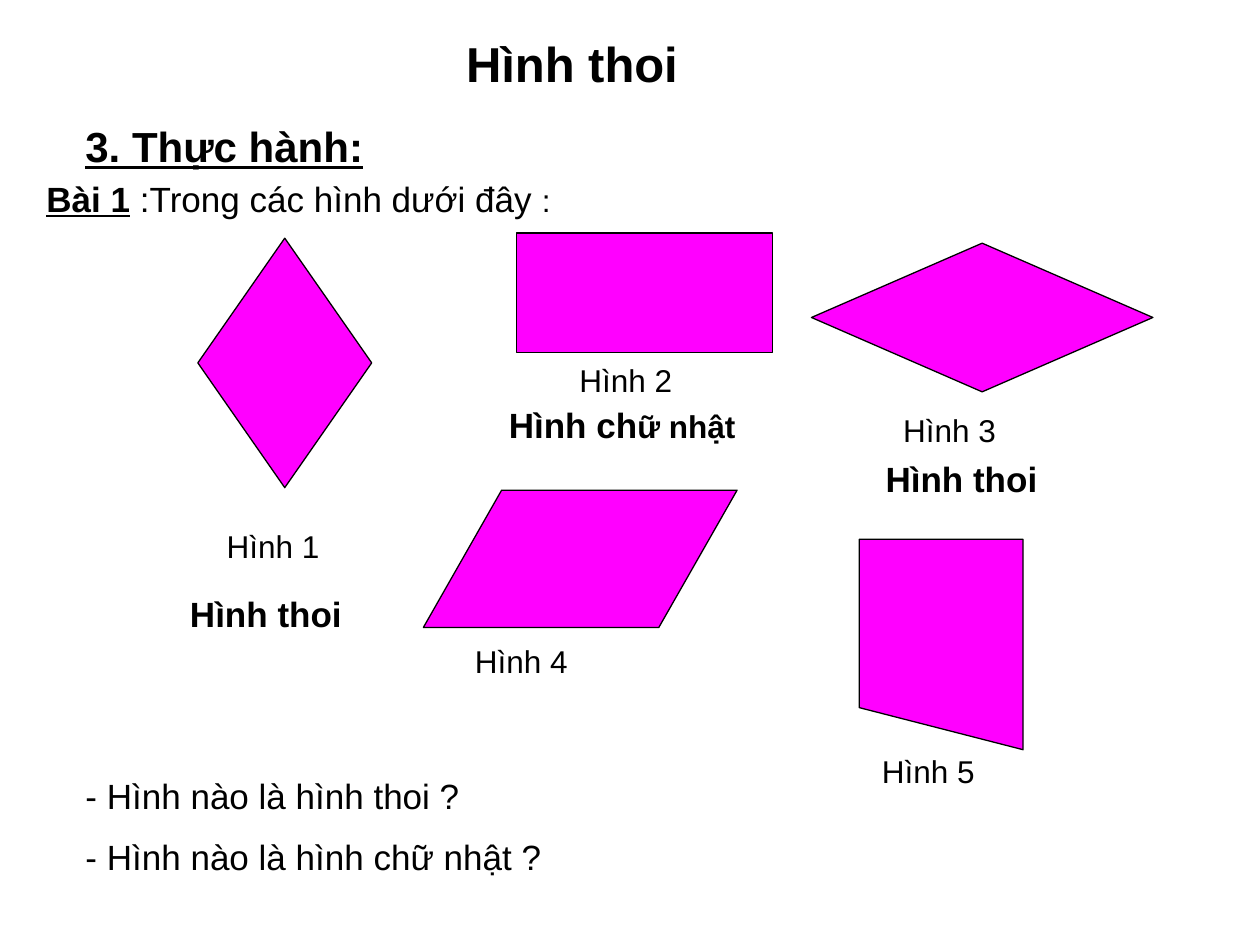
from pptx import Presentation
from pptx.dml.color import RGBColor
from pptx.enum.shapes import MSO_SHAPE as Shape
from pptx.util import Inches, Pt

BLACK = RGBColor(0x00, 0x00, 0x00)
MAGENTA = RGBColor(0xFF, 0x00, 0xFF)
WHITE = RGBColor(0xFF, 0xFF, 0xFF)
FONT = "Arial"


def add_span(para, text, size=20, bold=False, underline=False):
    span = para.add_run()
    span.text = text
    font = span.font
    font.name = FONT
    font.size = Pt(size)
    font.bold = bold
    font.underline = underline
    font.color.rgb = BLACK


class Lesson:
    """Holds the current page and the style of its figures and text."""

    def __init__(self, page):
        self.page = page
        fill = page.background.fill
        fill.solid()
        fill.fore_color.rgb = WHITE

    def text(self, left, top, width, height, *paragraphs, **style):
        """Each paragraph is a string, or a list of (text, overrides) spans."""
        box = self.page.shapes.add_textbox(
            Inches(left), Inches(top), Inches(width), Inches(height))
        frame = box.text_frame
        frame.word_wrap = True
        for index, content in enumerate(paragraphs):
            para = frame.add_paragraph() if index else frame.paragraphs[0]
            if index:
                para.space_before = Pt(10.5)
            spans = [(content, {})] if isinstance(content, str) else content
            for words, overrides in spans:
                add_span(para, words, **{**style, **overrides})

    def figure(self, kind, left, top, width, height):
        shape = self.page.shapes.add_shape(
            kind, Inches(left), Inches(top), Inches(width), Inches(height))
        shape.shadow.inherit = False
        shape.fill.solid()
        shape.fill.fore_color.rgb = MAGENTA
        shape.line.color.rgb = BLACK
        shape.line.width = Pt(0.75)
        return shape

    def caption(self, number, left, top):
        self.text(left, top, 1.11, 0.4, f"Hình {number}", size=18)

    def answer(self, content, left, top, width=1.87):
        self.text(left, top, width, 0.43, content, bold=True)


def main():
    deck = Presentation()
    deck.slide_width, deck.slide_height = Inches(10), Inches(7.5)
    lesson = Lesson(deck.slides.add_slide(deck.slide_layouts[6]))

    lesson.text(3.6, 0.22, 3.25, 0.57, "Hình thoi", size=28, bold=True)
    lesson.text(0.58, 0.91, 2.5, 0.5, "3. Thực hành:",
                size=24, bold=True, underline=True)
    lesson.text(0.27, 1.36, 7.71, 0.43, [
        ("Bài 1", {"bold": True, "underline": True}),
        (" :Trong các hình dưới đây ", {}),
        (":", {"size": 18}),
    ])

    lesson.figure(Shape.FLOWCHART_DECISION, 1.57, 1.89, 1.38, 1.98)
    lesson.figure(Shape.RECTANGLE, 4.1, 1.85, 2.03, 0.95)
    lesson.figure(Shape.FLOWCHART_DECISION, 6.44, 1.93, 2.71, 1.18)
    parallelogram = lesson.figure(Shape.PARALLELOGRAM, 3.36, 3.89, 2.49, 1.09)
    parallelogram.adjustments[0] = 0.57
    trapezoid = lesson.figure(Shape.FLOWCHART_MANUAL_INPUT, 6.82, 4.28, 1.3, 1.67)
    trapezoid.rotation = 180
    trapezoid.element.spPr.xfrm.set("flipH", "1")

    captions = [(1.7, 4.13), (4.5, 2.82), (7.07, 3.21), (3.67, 5.05), (6.9, 5.92)]
    for number, (left, top) in enumerate(captions, start=1):
        lesson.caption(number, left, top)

    lesson.answer("Hình thoi", 1.41, 4.65)
    lesson.answer("Hình thoi", 6.93, 3.58)
    lesson.answer([("Hình ch", {}), ("ữ nhật", {"size": 18})], 3.94, 3.15, width=2.65)

    lesson.text(0.58, 6.1, 4.91, 0.93,
                "- Hình nào là hình thoi ?", "- Hình nào là hình chữ nhật ?")

    deck.save("out.pptx")


if __name__ == "__main__":
    main()
